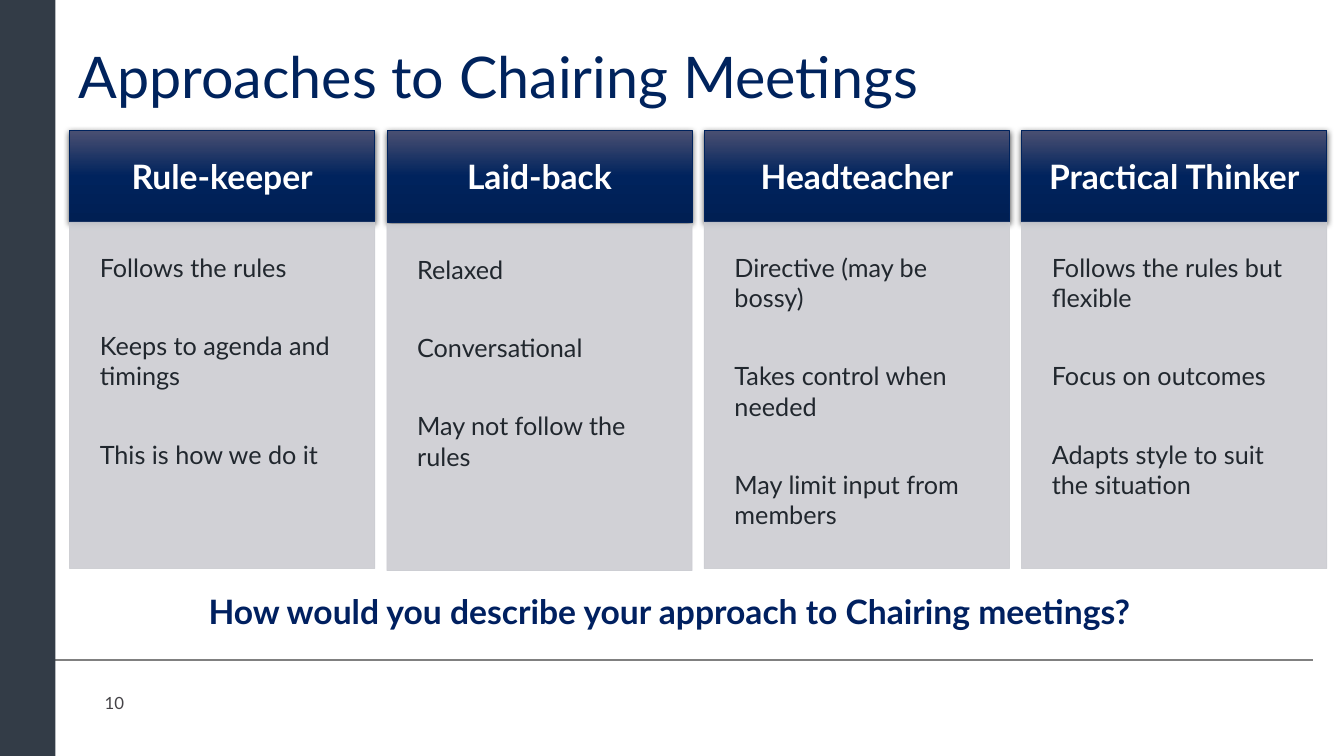
from lxml.etree import SubElement
from pptx import Presentation
from pptx.dml.color import RGBColor
from pptx.enum.shapes import MSO_CONNECTOR, MSO_SHAPE
from pptx.enum.text import MSO_ANCHOR, PP_ALIGN
from pptx.oxml import parse_xml
from pptx.oxml.ns import nsdecls, qn
from pptx.util import Inches, Pt

WIDE, HIGH = 13.33, 7.5
FONT = "Lato"
HUES = {
    "title": "00235D", "top": "4B5072", "low": "001F53", "panel": "CCCDD2",
    "body": "21272E", "white": "FFFFFF", "ask": "002060", "bar": "333C47",
    "rule": "808080", "page": "454347",
}
STYLES = [
    ("Rule-keeper", 0, ["Follows the rules", "Keeps to agenda and timings",
                        "This is how we do it"]),
    ("Laid-back", 0.02, ["Relaxed", "Conversational",
                         "May not follow the rules"]),
    ("Headteacher", 0, ["Directive (may be bossy)", "Takes control when needed",
                        "May limit input from members"]),
    ("Practical Thinker", 0, ["Follows the rules but flexible",
                              "Focus on outcomes",
                              "Adapts style to suit the situation"]),
]


def hue(name):
    """Return the named colour."""
    return RGBColor.from_string(HUES[name])


def write(shape, lines, size, color, bold=False, pad=None, align=PP_ALIGN.LEFT,
          anchor=MSO_ANCHOR.TOP, gap=0, lead=None):
    """Fill a shape with paragraphs of one style."""
    frame = shape.text_frame
    frame.word_wrap = True
    frame.vertical_anchor = anchor
    if pad is not None:
        frame.margin_left = frame.margin_right = Inches(pad)
        frame.margin_top = frame.margin_bottom = Inches(pad)
    frame.text = "\n".join(lines)
    for index, para in enumerate(frame.paragraphs):
        para.alignment = align
        para.space_before = Pt(gap if index else 0)
        if lead:
            para.line_spacing = lead
        para.font.name = FONT
        para.font.size = Pt(size)
        para.font.bold = bold
        para.font.color.rgb = hue(color)


def label(slide, box, text, size, color, **style):
    """Add one line of free text in a box."""
    area = slide.shapes.add_textbox(*map(Inches, box))
    write(area, [text], size, color, **style)


def block(slide, box, color):
    """Add a flat rectangle in a box."""
    shape = slide.shapes.add_shape(MSO_SHAPE.RECTANGLE, *map(Inches, box))
    shape.shadow.inherit = False
    shape.fill.solid()
    shape.fill.fore_color.rgb = hue(color)
    shape.line.color.rgb = hue(color)
    shape.line.width = Pt(0.5)
    return shape


def shade(shape):
    """Give a shape the header gradient and a soft shadow."""
    props = shape._element.spPr
    stops = "".join(
        f'<a:gs pos="{pos}"><a:srgbClr val="{HUES[name]}"/></a:gs>'
        for pos, name in ((0, "top"), (50000, "title"), (100000, "low")))
    props.replace(props.find(qn("a:solidFill")), parse_xml(
        f'<a:gradFill {nsdecls("a")} rotWithShape="1"><a:gsLst>{stops}</a:gsLst>'
        '<a:lin ang="5400000" scaled="0"/></a:gradFill>'))
    props.find(qn("a:effectLst")).append(parse_xml(
        f'<a:outerShdw {nsdecls("a")} blurRad="{Pt(4.5)}" dist="{Pt(1.5)}" '
        'dir="5400000" rotWithShape="0"><a:srgbClr val="000000">'
        '<a:alpha val="63000"/></a:srgbClr></a:outerShdw>'))


def fade(shape):
    """Make the fill and line of a shape slightly clear."""
    for color in shape._element.spPr.iter(qn("a:srgbClr")):
        SubElement(color, qn("a:alpha")).set("val", "90000")


def card(slide, box, name, drop, points):
    """Draw one approach: a header over a panel of points."""
    left, top, wide, high = box
    cap = 0.21 * high
    head = block(slide, (left, top, wide, cap), "title")
    shade(head)
    write(head, [name], 24, "white", bold=True, pad=0.24,
          align=PP_ALIGN.CENTER, anchor=MSO_ANCHOR.MIDDLE)
    panel = block(slide, (left, top + cap + drop, wide, high - cap), "panel")
    fade(panel)
    write(panel, points, 18, "body", pad=0.3, gap=34.2)


def cards(slide, box):
    """Spread the approaches over equal columns."""
    left, top, wide, high = box
    gap = 0.12
    step = (wide + gap) / len(STYLES)
    for col, (name, drop, points) in enumerate(STYLES):
        card(slide, (left + col * step, top, step - gap, high),
             name, drop, points)


def base(slide, box):
    """Draw the side bar, the bottom rule and the page number."""
    left, top, wide, high = box
    level = Inches(top + 0.873 * high)
    rule = slide.shapes.add_connector(
        MSO_CONNECTOR.STRAIGHT, Inches(left + 0.37), level,
        Inches(left + 13.02), level)
    rule.line.color.rgb = hue("rule")
    rule.line.width = Pt(1)
    SubElement(rule._element.spPr, qn("a:effectLst"))
    label(slide, (left + 0.94, top + 6.82, 0.55, 0.3), "10", 12, "page")
    bar = block(slide, (left, top, 0.55, high), "bar")
    bar.line.fill.background()


def main():
    """Build and save the slide."""
    deck = Presentation()
    deck.slide_width, deck.slide_height = Inches(WIDE), Inches(HIGH)
    slide = deck.slides.add_slide(deck.slide_layouts[6])
    base(slide, (0, 0, WIDE, HIGH))
    label(slide, (0.68, 0.39, 11.5, 0.79), "Approaches to Chairing Meetings",
          41, "title", anchor=MSO_ANCHOR.MIDDLE, lead=Pt(43.7))
    cards(slide, (0.69, 1.29, 12.47, 4.35))
    label(slide, (1.97, 5.86, 9.91, 0.68),
          "How would you describe your approach to Chairing meetings?",
          24, "ask", bold=True, lead=0.9)
    deck.save("out.pptx")


if __name__ == "__main__":
    main()
